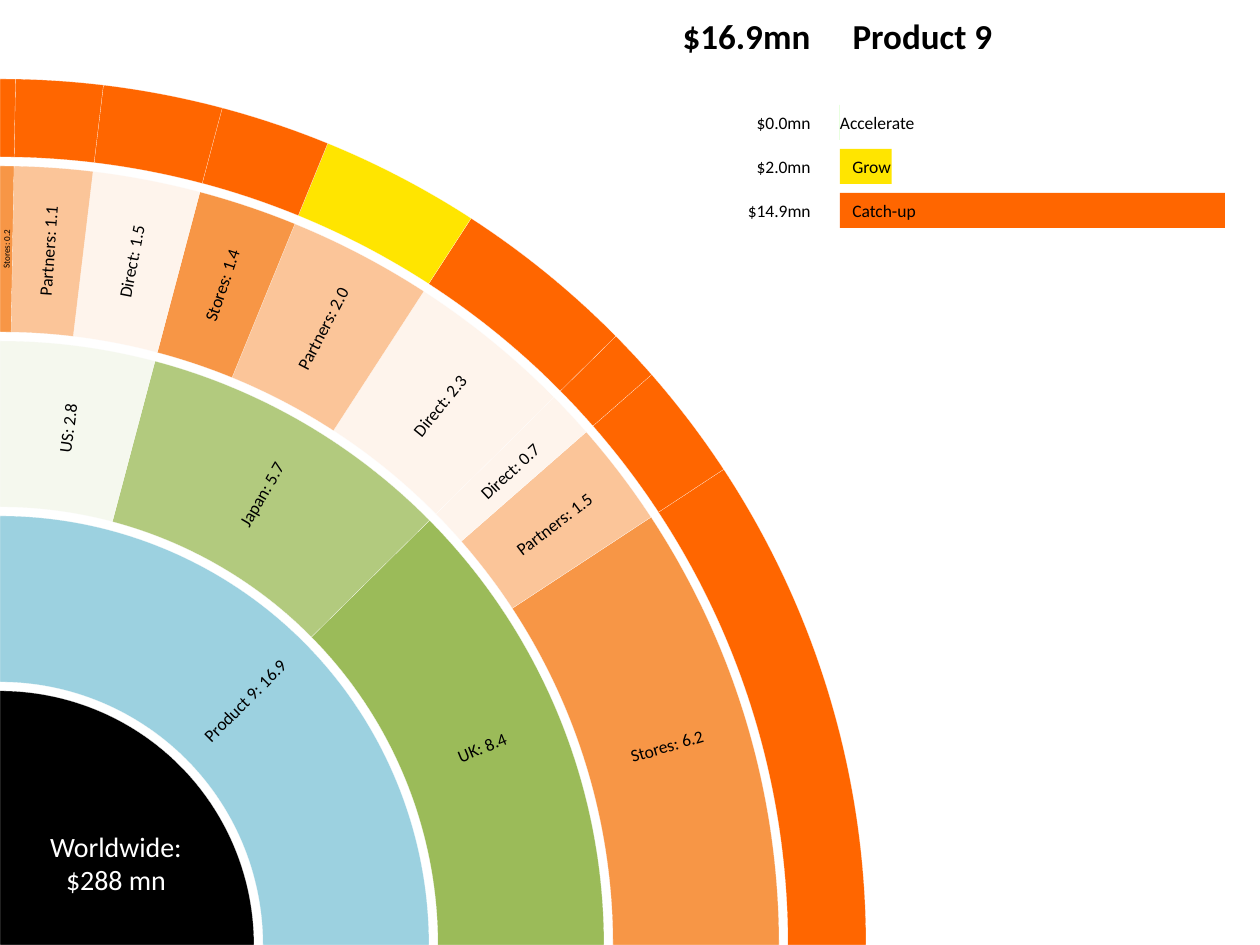
from math import cos, radians, sin
from pptx import Presentation
from pptx.dml.color import RGBColor
from pptx.enum.shapes import MSO_SHAPE
from pptx.enum.text import MSO_ANCHOR, MSO_AUTO_SIZE, PP_ALIGN
from pptx.util import Emu, Pt

PX = 914400 // 126
WIDTH, HEIGHT = 1260, 945

PRODUCT, TOTAL = "Product 9", "$16.9mn"
CATCH_UP, GROW, ACCELERATE = "FF6600", "FFE500", "4CFF00"
BARS = [("Accelerate", 0.0, ACCELERATE), ("Grow", 2.0, GROW), ("Catch-up", 14.9, CATCH_UP)]

CHANNEL_FILLS = {"Stores": "F79646", "Partners": "FBC599", "Direct": "FEF4EC"}
# region, sales, fill, channels: (name, sales, start angle, status, label size)
REGIONS = [
    ("UK", 8.4, "9BBB59", [("Stores", 6.2, 326.69, CATCH_UP, 10),
                           ("Partners", 1.5, 318.81, CATCH_UP, 10),
                           ("Direct", 0.7, 315.33, CATCH_UP, 10)]),
    ("Japan", 5.7, "B2CA7E", [("Direct", 2.3, 302.96, CATCH_UP, 10),
                              ("Partners", 2.0, 292.24, GROW, 10),
                              ("Stores", 1.4, 284.87, CATCH_UP, 10)]),
    ("US", 2.8, "F5F8EE", [("Direct", 1.5, 276.86, CATCH_UP, 10),
                           ("Partners", 1.1, 271.03, CATCH_UP, 10),
                           ("Stores", 0.2, 270, CATCH_UP, 5.2)]),
]

# outer radius and thickness of each ring
CORE, PRODUCT_RING, REGION_RING, CHANNEL_RING, STATUS_RING = (
    (254, 254), (429, 166), (604, 166), (779, 166), (866, 78))
LABEL_WIDTH, LABEL_HEIGHT = 166, 18
AMOUNT_LEFT, AMOUNT_WIDTH = 648, 175
BAR_LEFT, BAR_TOP, BAR_HEIGHT, BAR_STEP, BAR_MAX = 840, 105, 35, 44, 385
HEADING_HEIGHT = 70


def color(value):
    return RGBColor.from_string(value)


def px(*lengths):
    return [Emu(round(length * PX)) for length in lengths]


def write(box, text, size=10, align=PP_ALIGN.LEFT, bold=False, fill="000000", **margins):
    frame = box.text_frame
    settings = {"word_wrap": False, "auto_size": MSO_AUTO_SIZE.NONE,
                "vertical_anchor": MSO_ANCHOR.MIDDLE, **margins}
    for name, value in settings.items():
        setattr(frame, name, value)
    for index, line in enumerate(text.split("\n")):
        para = frame.add_paragraph() if index else frame.paragraphs[0]
        para.alignment = align
        span = para.add_run()
        span.text = line
        for name, value in {"name": "Calibri", "size": Pt(size), "bold": bold}.items():
            setattr(span.font, name, value)
        span.font.color.rgb = color(fill)


def add_text(place, text, **style):
    box = page.shapes.add_textbox(*px(*place))
    write(box, text, **style)
    return box


def add_shape(kind, place, fill):
    shape = page.shapes.add_shape(kind, *px(*place))
    shape.shadow.inherit = False
    shape.fill.solid()
    shape.fill.fore_color.rgb = color(fill)
    return shape


def add_sector(ring, start, end, fill, label=None, size=10):
    """Draw a ring sector centred on the bottom left corner, with a radial label."""
    radius, thickness = ring
    sector = add_shape(MSO_SHAPE.BLOCK_ARC,
                       (-radius, HEIGHT - radius, 2 * radius, 2 * radius), fill)
    sector.line.color.rgb = color("FFFFFF")
    sector.line.width = Pt(0.05)
    # angles are stored in 60000ths of a degree, adjustments in 100000ths
    sector.adjustments[0] = start * 0.6
    sector.adjustments[1] = end % 360 * 0.6
    sector.adjustments[2] = thickness / (2 * radius)
    if label:
        middle = (start + end) / 2
        distance = radius - thickness / 2
        x = distance * cos(radians(middle))
        y = HEIGHT + distance * sin(radians(middle))
        box = add_text((x - LABEL_WIDTH / 2, y - LABEL_HEIGHT / 2, LABEL_WIDTH, LABEL_HEIGHT),
                       label, size=size, align=PP_ALIGN.CENTER, margin_top=0, margin_bottom=0)
        box.rotation = middle


deck = Presentation()
deck.slide_width, deck.slide_height = px(WIDTH, HEIGHT)
page = deck.slides.add_slide(deck.slide_layouts[5])

title = page.shapes.title
title.left, title.top, title.width, title.height = px(BAR_LEFT, 0, WIDTH - BAR_LEFT, HEADING_HEIGHT)
write(title, PRODUCT, size=20, bold=True)
add_text((AMOUNT_LEFT, 0, AMOUNT_WIDTH, HEADING_HEIGHT), TOTAL,
         size=20, bold=True, align=PP_ALIGN.RIGHT)

largest = max(value for _, value, _ in BARS)
for row, (name, value, fill) in enumerate(BARS):
    top = BAR_TOP + row * BAR_STEP
    bar = add_shape(MSO_SHAPE.RECTANGLE,
                    (BAR_LEFT, top, BAR_MAX * value / largest, BAR_HEIGHT), fill)
    bar.line.fill.background()
    write(bar, name)
    add_text((AMOUNT_LEFT, top, AMOUNT_WIDTH, BAR_HEIGHT), f"${value:.1f}mn", align=PP_ALIGN.RIGHT)

add_sector(CORE, 270, 360, "000000")
add_sector(PRODUCT_RING, 270, 360, "9CD1E0", f"{PRODUCT}: 16.9")
end = 360
for region, sales, fill, channels in REGIONS:
    add_sector(REGION_RING, channels[-1][2], end, fill, f"{region}: {sales}")
    for channel, amount, start, status, size in channels:
        add_sector(CHANNEL_RING, start, end, CHANNEL_FILLS[channel], f"{channel}: {amount}", size)
        add_sector(STATUS_RING, start, end, status)
        end = start

add_text((0, 829, 232, 68), "Worldwide:\n$288 mn", size=16, align=PP_ALIGN.CENTER, fill="FFFFFF")

deck.save("out.pptx")
